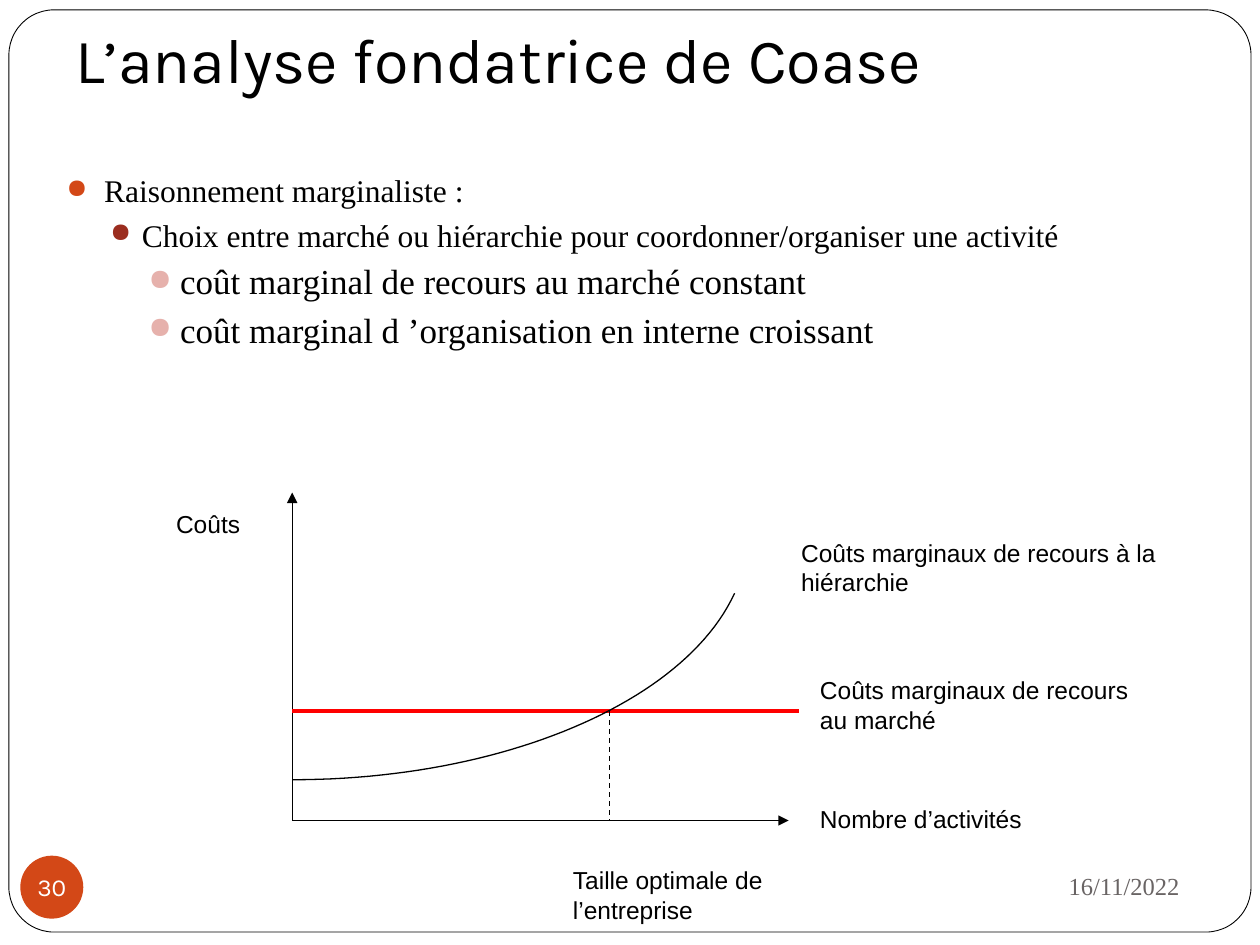
from lxml import etree
from pptx import Presentation
from pptx.dml.color import RGBColor
from pptx.enum import dml, shapes, text
from pptx.oxml import ns
from pptx.util import Cm, Pt

BLACK = RGBColor(0x00, 0x00, 0x00)
WHITE = RGBColor(0xFF, 0xFF, 0xFF)
RED = RGBColor(0xFF, 0x00, 0x00)
ORANGE = RGBColor(0xD3, 0x48, 0x17)
BRICK = RGBColor(0x9B, 0x2D, 0x1F)
PINK = RGBColor(0xE6, 0xB1, 0xAC)
GREY = RGBColor(0x69, 0x64, 0x64)

SERIF, SANS, DISPLAY = "Times New Roman", "Arial", "Karla"


def add_run(paragraph, words, size, font, color=BLACK):
    run = paragraph.add_run()
    run.text = words
    run.font.size = Pt(size)
    run.font.name = font
    run.font.color.rgb = color


def add_textbox(slide, left, top, width, height):
    box = slide.shapes.add_textbox(Cm(left), Cm(top), Cm(width), Cm(height))
    box.text_frame.word_wrap = True
    return box.text_frame


def add_line(slide, start, end, color=BLACK, width=0.75, arrow=False, dashed=False):
    line = slide.shapes.add_connector(
        shapes.MSO_CONNECTOR.STRAIGHT, *(Cm(v) for v in start + end))
    line.line.color.rgb = color
    line.line.width = Pt(width)
    if dashed:
        line.line.dash_style = dml.MSO_LINE.DASH
    if arrow:
        etree.SubElement(line.line._get_or_add_ln(), ns.qn("a:tailEnd"), type="triangle")
    etree.SubElement(line._element.spPr, ns.qn("a:effectLst"))


def add_frame(slide, left, top, width, height):
    frame = slide.shapes.add_shape(
        shapes.MSO_SHAPE.ROUNDED_RECTANGLE, Cm(left), Cm(top), Cm(width), Cm(height))
    frame.adjustments[0] = 0.049
    frame.shadow.inherit = False
    frame.fill.solid()
    frame.fill.fore_color.rgb = WHITE
    frame.line.color.rgb = BLACK
    frame.line.width = Pt(0.5)


def add_title(slide, left, top, width, height):
    title = add_textbox(slide, left, top, width, height)
    title.vertical_anchor = text.MSO_ANCHOR.BOTTOM
    title.margin_bottom = Cm(0.25)
    add_run(title.paragraphs[0], "L’analyse fondatrice de Coase", 36, DISPLAY)


def set_bullet(paragraph, indent, hanging, color):
    props = paragraph._p.get_or_add_pPr()
    props.set("marL", str(Cm(indent)))
    props.set("indent", str(-Cm(hanging)))
    bullet_color = etree.SubElement(props, ns.qn("a:buClr"))
    etree.SubElement(bullet_color, ns.qn("a:srgbClr"), val=str(color))
    etree.SubElement(props, ns.qn("a:buSzPct"), val="85000")
    etree.SubElement(props, ns.qn("a:buChar"), char="●")


def add_reasoning(slide, left, top, width, height):
    levels = [(0.76, 0.76, 5.8, ORANGE, 18), (1.52, 0.64, 3.7, BRICK, 18),
              (2.29, 0.64, 3.7, PINK, 20)]
    points = [
        (0, "Raisonnement marginaliste :"),
        (1, "Choix entre marché ou hiérarchie pour coordonner/organiser une activité"),
        (2, "coût marginal de recours au marché constant"),
        (2, "coût marginal d ’organisation en interne croissant"),
    ]
    reasoning = add_textbox(slide, left, top, width, height)
    for i, (level, words) in enumerate(points):
        indent, hanging, before, color, size = levels[level]
        point = reasoning.add_paragraph() if i else reasoning.paragraphs[0]
        point.level = level
        point.space_before = Pt(before)
        set_bullet(point, indent, hanging, color)
        add_run(point, words, size, SERIF)


def bezier(p0, p1, p2, p3, steps=48):
    for i in range(steps + 1):
        t = i / steps
        s = 1 - t
        yield tuple(Cm(s**3 * a + 3 * s * s * t * b + 3 * s * t * t * c + t**3 * d)
                    for a, b, c, d in zip(p0, p1, p2, p3))


def add_cost_diagram(slide, left, top):
    def at(x, y):
        return left + x, top + y

    axis_x, axis_y, market_y, optimum_x = 2.59, 6.61, 4.4, 8.99
    origin = at(axis_x, axis_y)
    add_line(slide, origin, at(axis_x, 0), arrow=True)
    add_line(slide, origin, at(12.6, axis_y), arrow=True)
    add_line(slide, at(axis_x, market_y), at(12.8, market_y), RED, 2.25)

    start, *rest = bezier(at(axis_x, 5.79), at(6.81, 5.79), at(10.49, 4.24), at(11.51, 2.03))
    builder = slide.shapes.build_freeform(*start)
    builder.add_line_segments(rest, close=False)
    hierarchy = builder.convert_to_shape()
    hierarchy.shadow.inherit = False
    hierarchy.fill.background()
    hierarchy.line.color.rgb = BLACK
    hierarchy.line.width = Pt(0.75)

    add_line(slide, at(optimum_x, market_y), at(optimum_x, axis_y), dashed=True)

    labels = [
        ("Coûts marginaux de recours au marché", 12.98, 3.56, 7.39, 1.45),
        ("Nombre d’activités", 12.98, 6.15, 7.19, 0.86),
        ("Coûts", 0, 0.2, 3.4, 0.86),
        ("Taille optimale de l’entreprise", 8, 7.39, 6.2, 1.45),
        ("Coûts marginaux de recours à la hiérarchie", 12.6, 0.79, 8.2, 1.45),
    ]
    for words, x, y, width, height in labels:
        label = add_textbox(slide, *at(x, y), width, height)
        add_run(label.paragraphs[0], words, 14, SANS)


def add_date(slide, left, top, width, height):
    date = add_textbox(slide, left, top, width, height)
    date.vertical_anchor = text.MSO_ANCHOR.MIDDLE
    date.paragraphs[0].alignment = text.PP_ALIGN.RIGHT
    add_run(date.paragraphs[0], "16/11/2022", 14, SERIF, GREY)


def add_page_number(slide, left, top, size):
    badge = slide.shapes.add_shape(
        shapes.MSO_SHAPE.OVAL, Cm(left), Cm(top), Cm(size), Cm(size))
    badge.shadow.inherit = False
    badge.fill.solid()
    badge.fill.fore_color.rgb = ORANGE
    badge.line.fill.background()
    number = badge.text_frame
    number.margin_left = number.margin_right = number.margin_top = number.margin_bottom = 0
    number.word_wrap = False
    number.vertical_anchor = text.MSO_ANCHOR.MIDDLE
    number.paragraphs[0].alignment = text.PP_ALIGN.CENTER
    add_run(number.paragraphs[0], "30", 14, DISPLAY, WHITE)


def main():
    deck = Presentation()
    deck.slide_width, deck.slide_height = Cm(25.4), Cm(19.05)
    slide = deck.slides.add_slide(deck.slide_layouts[6])
    add_frame(slide, 0.18, 0.2, 25.04, 18.59)
    add_title(slide, 1.27, 0.76, 20.75, 1.42)
    add_reasoning(slide, 1.09, 3.33, 22.86, 6.35)
    add_cost_diagram(slide, 3.3, 9.93)
    add_date(slide, 17.15, 17.2, 6.88, 1.32)
    add_page_number(slide, 0.41, 17.25, 1.27)
    deck.save("out.pptx")


if __name__ == "__main__":
    main()
